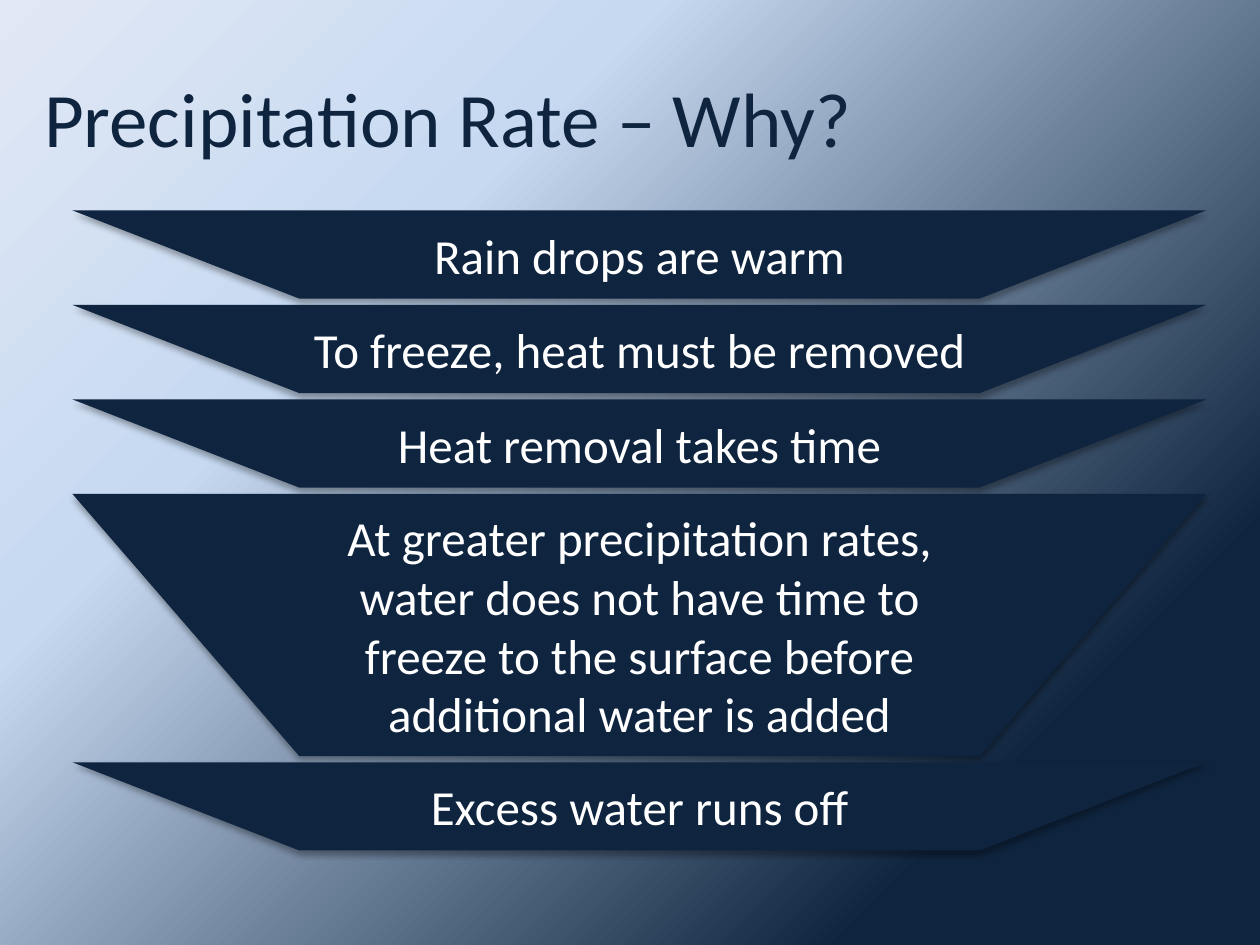
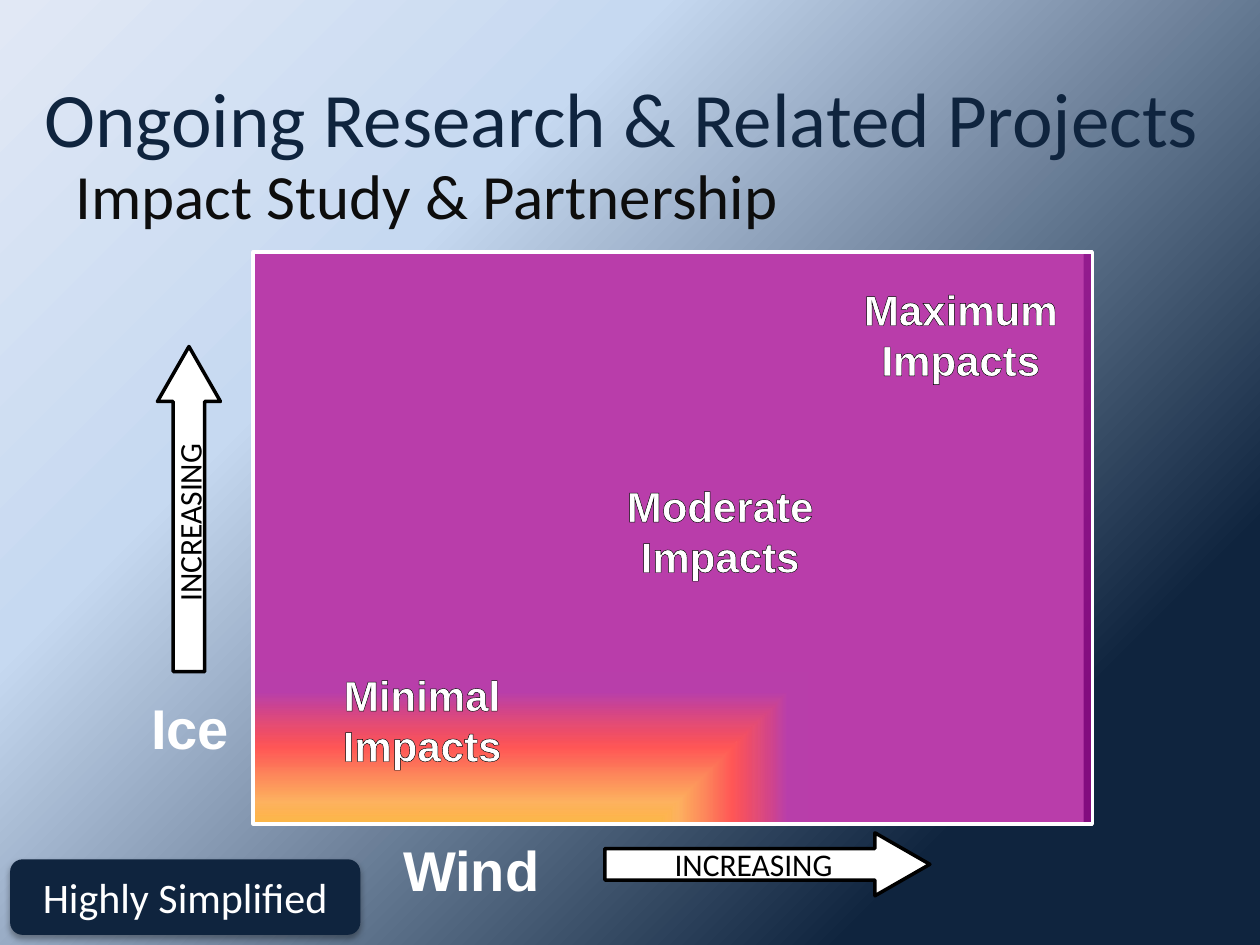
import dataclasses

import lxml.etree
import pptx
import pptx.dml.color
import pptx.enum.shapes
import pptx.enum.text
import pptx.oxml
import pptx.oxml.ns
import pptx.util

SHAPE = pptx.enum.shapes.MSO_SHAPE
ALIGN = pptx.enum.text.PP_ALIGN
ANCHOR = pptx.enum.text.MSO_ANCHOR
AUTO_SIZE = pptx.enum.text.MSO_AUTO_SIZE

COLS, ROWS = 100, 75
CELL = pptx.util.Inches(0.1)
NAVY, WHITE, BLACK, INK = "0F243E", "FFFFFF", "000000", "0D0D0D"
BODY_FONT, LABEL_FONT = "Calibri", "Arial"
WIDE_INSETS = (0.18, 0.09)

SKY_STOPS = [(19, NAVY, 52), (70, "C6D9F1", 100), (100, "E1E8F5", 100)]
IMPACT_STOPS = [
    (0, BLACK, 100), (21, "FFFF00", 82), (39, "FFCF37", 100),
    (55, "FC8604", 63), (74, "FF0000", 66), (93, "A50792", 77),
]


@dataclasses.dataclass
class Box:
    col: float
    row: float
    cols: float
    rows: float

    def place(self, col, row, cols, rows):
        return Box(self.col + col, self.row + row, cols, rows)

    def lengths(self):
        return [round(n * CELL) for n in (self.col, self.row, self.cols, self.rows)]


SLIDE = Box(0, 0, COLS, ROWS)


def rgb(value):
    return pptx.dml.color.RGBColor.from_string(value)


def add_xml(parent, tag, **attributes):
    values = {name: str(value) for name, value in attributes.items()}
    return lxml.etree.SubElement(parent, pptx.oxml.ns.qn(tag), values)


def add_color(parent, color, alpha):
    node = add_xml(parent, "a:srgbClr", val=color)
    if alpha < 100:
        add_xml(node, "a:alpha", val=alpha * 1000)


def set_gradient(fill, owner, stops, angle=None):
    fill.gradient()
    gradient = owner.xpath(".//a:gradFill")[0]
    for child in list(gradient):
        gradient.remove(child)
    stop_list = add_xml(gradient, "a:gsLst")
    for position, color, alpha in stops:
        add_color(add_xml(stop_list, "a:gs", pos=position * 1000), color, alpha)
    if angle is not None:
        add_xml(gradient, "a:lin", ang=angle * 60000, scaled=0)
    else:
        focus = add_xml(gradient, "a:path", path="rect")
        add_xml(focus, "a:fillToRect", t=100000, r=100000)


def drop_shadow(shape):
    effects = shape.element.xpath("./p:spPr/a:effectLst")[0]
    shadow = add_xml(
        effects, "a:outerShdw", blurRad=pptx.util.Pt(3.5), dist=pptx.util.Pt(2.2),
        dir=90 * 60000, algn="ctr", rotWithShape=0,
    )
    add_color(shadow, BLACK, 32)


def write(shape, text, size, color, font=BODY_FONT, align=ALIGN.CENTER,
          anchor=ANCHOR.MIDDLE, insets=(0.1, 0.05), bold=False):
    frame = shape.text_frame
    frame.text = text
    frame.word_wrap = True
    frame.vertical_anchor = anchor
    frame.margin_left = frame.margin_right = pptx.util.Inches(insets[0])
    frame.margin_top = frame.margin_bottom = pptx.util.Inches(insets[1])
    for paragraph in frame.paragraphs:
        paragraph.alignment = align
        for run in paragraph.runs:
            run.font.name = font
            run.font.size = pptx.util.Pt(size)
            run.font.bold = bold
            run.font.color.rgb = rgb(color)


def add_block(shapes, kind, box, fill=None, line=None):
    block = shapes.add_shape(kind, *box.lengths())
    if fill:
        block.fill.solid()
        block.fill.fore_color.rgb = rgb(fill)
    if line:
        block.line.color.rgb = rgb(line)
        block.line.width = pptx.util.Pt(2)
    else:
        block.line.fill.background()
    block.shadow.inherit = False
    return block


def add_navy_block(shapes, kind, box, text, size):
    block = add_block(shapes, kind, box, NAVY)
    drop_shadow(block)
    write(block, text, size, WHITE)


def add_label(shapes, box, text, size, outlined=False):
    label = shapes.add_textbox(*box.lengths())
    write(label, text, size, WHITE, LABEL_FONT, anchor=ANCHOR.TOP,
          insets=WIDE_INSETS, bold=True)
    label.text_frame.auto_size = AUTO_SIZE.SHAPE_TO_FIT_TEXT
    if outlined:
        for properties in label.element.xpath(".//a:rPr"):
            outline = pptx.oxml.parse_xml(
                f'<a:ln {pptx.oxml.ns.nsdecls("a")} w="{pptx.util.Pt(0.75)}"/>')
            add_color(add_xml(outline, "a:solidFill"), BLACK, 100)
            properties.insert(0, outline)


def add_axis(shapes, name, name_box, arrow_box, rotation=0):
    add_label(shapes, name_box, name, 32)
    arrow = add_block(shapes, SHAPE.RIGHT_ARROW, arrow_box, WHITE, BLACK)
    arrow.adjustments[0] = 0.5
    arrow.adjustments[1] = 0.872
    arrow.rotation = rotation
    write(arrow, "INCREASING", 18, BLACK, insets=WIDE_INSETS)


def add_titled_slide(deck, title, title_cols):
    slide = deck.slides.add_slide(deck.slide_layouts[5])
    heading = slide.shapes.title
    box = SLIDE.place(2.5, 3, title_cols, 12.5)
    heading.left, heading.top, heading.width, heading.height = box.lengths()
    write(heading, title, 44, NAVY, align=ALIGN.LEFT)
    return slide


def add_reasons(shapes, box, reasons):
    row = 0
    for reason, rows in reasons:
        add_navy_block(shapes, SHAPE.FLOWCHART_MANUAL_OPERATION,
                       box.place(0, row, box.cols, rows), reason, 28)
        row += rows + 0.5


def add_impact_chart(shapes, box):
    add_block(shapes, SHAPE.RECTANGLE, box.place(0, 0, box.cols - 0.7, box.rows), WHITE)
    field = add_block(shapes, SHAPE.RECTANGLE, box, line=WHITE)
    set_gradient(field.fill, field.element, IMPACT_STOPS)
    add_axis(shapes, "Ice", box.place(-14.4, 34.1, 18.8, 7.2),
             box.place(-18, 17.9, 25.8, 5), 270)
    add_axis(shapes, "Wind", box.place(7.9, box.rows, 18.8, 7.2),
             box.place(27.9, box.rows + 0.7, 25.8, 5))
    for text, col, row, cols in (
        ("Minimal Impacts", 4, 32.2, 18.8),
        ("Maximum\nImpacts", 45.7, 1.6, 20.9),
        ("Moderate\nImpacts", 26.1, 17.2, 21.9),
    ):
        add_label(shapes, box.place(col, row, cols, 9.9), text, 24, outlined=True)


def build_rate_slide(deck):
    slide = add_titled_slide(deck, "Precipitation Rate – Why?", 90)
    add_reasons(slide.shapes, SLIDE.place(5.75, 16.7, 90, 50.8), [
        ("Rain drops are warm", 7),
        ("To freeze, heat must be removed", 7),
        ("Heat removal takes time", 7),
        ("At greater precipitation rates, water does not have time to "
         "freeze to the surface before additional water is added", 20.8),
        ("Excess water runs off", 7),
    ])


def build_research_slide(deck):
    slide = add_titled_slide(deck, "Ongoing Research & Related Projects", 94.2)
    subtitle = slide.shapes.add_textbox(*SLIDE.place(5, 9.2, 90, 12.5).lengths())
    write(subtitle, "Impact Study & Partnership", 36, INK, align=ALIGN.LEFT)
    diagram = slide.shapes.add_group_shape()
    add_impact_chart(diagram.shapes, SLIDE.place(20.1, 20, 66.6, 45.4))
    add_navy_block(slide.shapes, SHAPE.ROUNDED_RECTANGLE,
                   SLIDE.place(0.8, 68.2, 27.8, 6), "Highly Simplified", 24)


def main():
    deck = pptx.Presentation()
    deck.slide_width, deck.slide_height = COLS * CELL, ROWS * CELL
    master = deck.slide_master
    set_gradient(master.background.fill, master.element, SKY_STOPS, 225)
    build_rate_slide(deck)
    build_research_slide(deck)
    deck.save("out.pptx")


if __name__ == "__main__":
    main()
